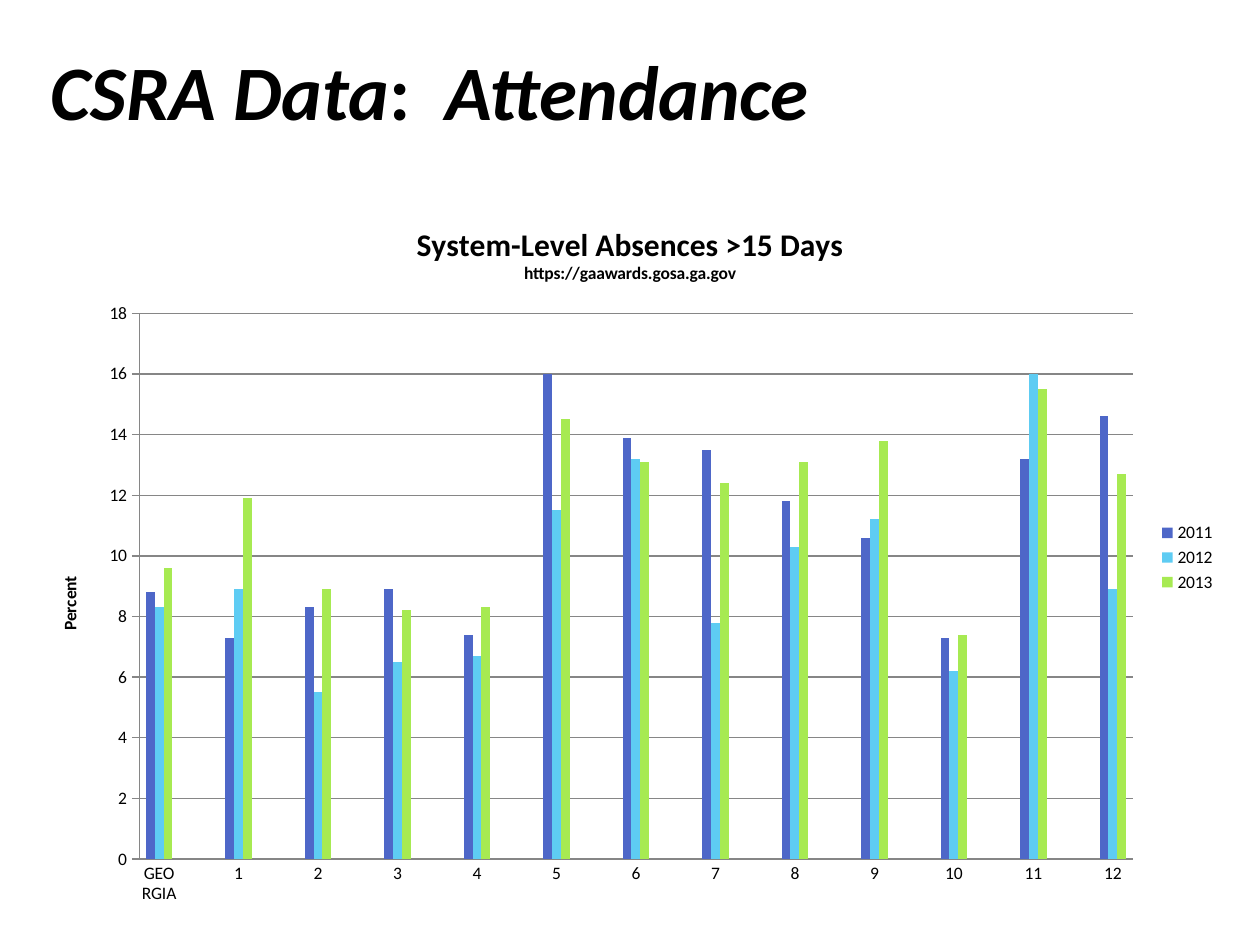
from dataclasses import dataclass

from pptx import Presentation
from pptx.chart.data import CategoryChartData
from pptx.dml.color import RGBColor
from pptx.enum.chart import XL_CHART_TYPE as ChartType
from pptx.enum.chart import XL_LEGEND_POSITION as LegendPos
from pptx.enum.chart import XL_TICK_MARK as Tick
from pptx.enum.text import MSO_ANCHOR as Anchor
from pptx.enum.text import PP_ALIGN as Align
from pptx.oxml import parse_xml
from pptx.oxml.ns import nsdecls
from pptx.util import Inches, Pt


@dataclass(frozen=True)
class Theme:
    font: str = "Calibri"
    text: str = "000000"
    grid: str = "868686"
    series: tuple = ("4E67C8", "5ECCF3", "A7EA52")
    title_size: int = 44
    heading_size: int = 18
    chart_size: int = 10


ABSENCES = {
    "GEORGIA": (8.8, 8.3, 9.6),
    "1": (7.3, 8.9, 11.9),
    "2": (8.3, 5.5, 8.9),
    "3": (8.9, 6.5, 8.2),
    "4": (7.4, 6.7, 8.3),
    "5": (16, 11.5, 14.5),
    "6": (13.9, 13.2, 13.1),
    "7": (13.5, 7.8, 12.4),
    "8": (11.8, 10.3, 13.1),
    "9": (10.6, 11.2, 13.8),
    "10": (7.3, 6.2, 7.4),
    "11": (13.2, 16, 15.5),
    "12": (14.6, 8.9, 12.7),
}
YEARS = ("2011", "2012", "2013")


def spaced(items, gap):
    """Put a gap between neighbouring items."""
    return [x for item in items for x in (item, gap)][:-1]


def absence_data():
    data = CategoryChartData()
    data.categories = spaced(ABSENCES, "")
    for year, values in zip(YEARS, zip(*ABSENCES.values())):
        data.add_series(year, spaced(values, None))
    return data


class SlideBuilder:
    def __init__(self, prs, theme):
        self.prs, self.theme = prs, theme
        self.slide = prs.slides.add_slide(prs.slide_layouts[5])

    def box(self, x, y, w, h):
        """Turn shares of the slide into lengths."""
        sw, sh = self.prs.slide_width, self.prs.slide_height
        return int(x * sw), int(y * sh), int(w * sw), int(h * sh)

    def style(self, font, size=None, bold=False, italic=False):
        font.name = self.theme.font
        font.size = Pt(size or self.theme.chart_size)
        font.bold, font.italic = bold, italic
        font.color.rgb = RGBColor.from_string(self.theme.text)

    def add_text(self, p, text, **fmt):
        r = p.add_run()
        r.text = text
        self.style(r.font, **fmt)

    def title(self, runs, *area):
        sp = self.slide.shapes.title
        sp.left, sp.top, sp.width, sp.height = self.box(*area)
        tf = sp.text_frame
        tf.vertical_anchor = Anchor.MIDDLE
        p = tf.paragraphs[0]
        p.alignment = Align.LEFT
        for text, italic in runs:
            self.add_text(p, text, size=self.theme.title_size, bold=True, italic=italic)

    def column_chart(self, data, heading, source, unit, plot_area, *area):
        frame = self.slide.shapes.add_chart(
            ChartType.COLUMN_CLUSTERED, *self.box(*area), data)
        chart = frame.chart
        self.style(chart.font)
        tf = chart.chart_title.text_frame
        self.add_text(tf.paragraphs[0], heading, size=self.theme.heading_size, bold=True)
        self.add_text(tf.add_paragraph(), source, bold=True)
        chart.chart_title.include_in_layout = False
        chart.has_legend = True
        chart.legend.position = LegendPos.RIGHT
        chart.legend.include_in_layout = False
        self.axes(chart, unit)
        self.columns(chart.plots[0])
        self.place_plot(chart, *plot_area)

    def axes(self, chart, unit):
        grid = RGBColor.from_string(self.theme.grid)
        cat, val = chart.category_axis, chart.value_axis
        cat.major_tick_mark = Tick.NONE
        val.major_tick_mark = Tick.OUTSIDE
        val.minimum_scale, val.maximum_scale, val.major_unit = 0, 18, 2
        val.has_major_gridlines = True
        for part in (cat, val, val.major_gridlines):
            part.format.line.color.rgb = grid
            part.format.line.width = Pt(0.75)
        self.add_text(val.axis_title.text_frame.paragraphs[0], unit, bold=True)

    def columns(self, plot):
        plot.gap_width, plot.overlap = 150, 0
        plot.vary_by_categories = False
        for series, color in zip(plot.series, self.theme.series):
            series.format.fill.solid()
            series.format.fill.fore_color.rgb = RGBColor.from_string(color)
            series.invert_if_negative = False

    def place_plot(self, chart, x, y, w, h):
        """Fix the inner plot area, in shares of the chart."""
        area = chart.plots[0]._element.getparent()
        for old in area.findall("{*}layout"):
            area.remove(old)
        sizes = "".join(f'<c:{k} val="{v}"/>' for k, v in zip("xywh", (x, y, w, h)))
        area.insert(0, parse_xml(
            f'<c:layout {nsdecls("c")}><c:manualLayout><c:layoutTarget val="inner"/>'
            f'<c:xMode val="edge"/><c:yMode val="edge"/>{sizes}'
            '</c:manualLayout></c:layout>'))


def main():
    prs = Presentation()
    prs.slide_width, prs.slide_height = Inches(10), Inches(7.5)
    s = SlideBuilder(prs, Theme())
    s.title([("CSRA Data", True), (":  ", False), ("Attendance", True)],
            0.03, 0.01, 0.77, 0.17)
    s.column_chart(absence_data(), "System-Level Absences >15 Days",
                   "https://gaawards.gosa.ga.gov", "Percent",
                   (0.09, 0.16, 0.83, 0.76), 0.025, 0.21, 0.95, 0.76)
    prs.save("out.pptx")


if __name__ == "__main__":
    main()
